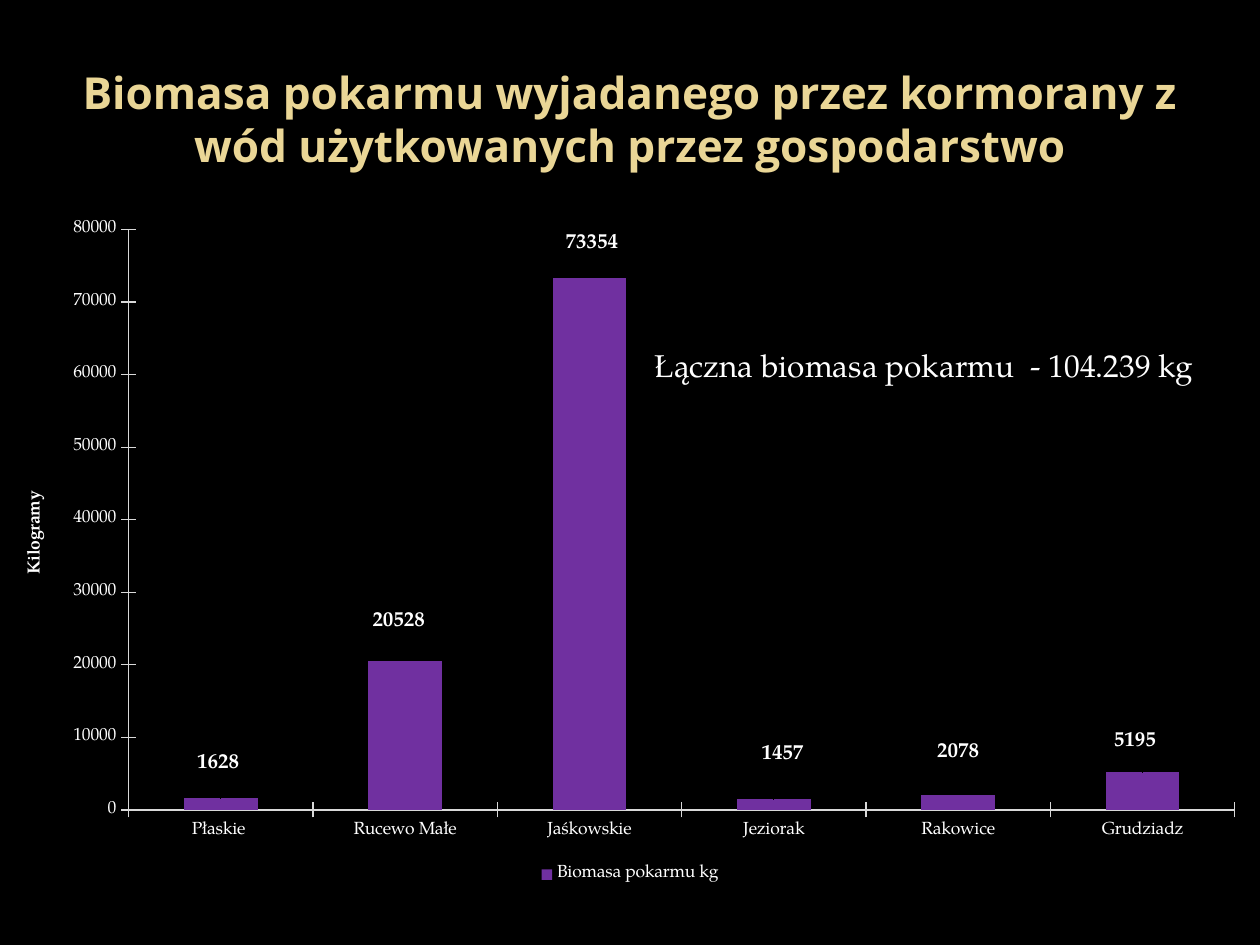
"""Build a slide charting the food biomass eaten by cormorants."""
from dataclasses import dataclass

from lxml import etree
from pptx import Presentation
from pptx import util as u
from pptx.chart.data import CategoryChartData
from pptx.dml.color import RGBColor
from pptx.enum import chart as ch, text
from pptx.oxml.ns import qn


@dataclass(frozen=True)
class Theme:
    back: str = "000000"
    ink: str = "FFFFFF"
    gold: str = "EAD696"
    bar: str = "7030A0"
    axis: str = "D9D9D9"
    head_font: str = "Open Sans"
    body_font: str = "TeX Gyre Pagella"
    title: float = 25.2
    note: float = 18
    label: float = 12
    small: float = 10


T = Theme()
W, H = 10, 7.5
TITLE = "Biomasa pokarmu wyjadanego przez kormorany z wód użytkowanych przez gospodarstwo"
NOTE = "Łączna biomasa pokarmu  - 104.239 kg"
AXIS_TITLE = "Kilogramy"
SERIES = "Biomasa pokarmu kg"
DATA = [
    ("Płaskie ", 1628, (-0.2, -2.8)),
    ("Rucewo Małe", 20528, (-0.5, -3.5)),
    ("Jaśkowskie", 73354, (0.2, -2.8)),
    ("Jeziorak", 1457, (0.7, -4.4)),
    ("Rakowice", 2078, (0, -4)),
    ("Grudziadz", 5195, (-0.6, -2.3)),
]
BOXES = {
    "title": (0.05, 0.04, 0.9, 0.17),
    "chart": (0, 0.22, 1, 0.72),
    "note": (0.51, 0.36, 0.46, 0.05),
}
PLOT = {"x": 10.2, "y": 3.2, "w": 87.8, "h": 85.3}
AXIS_TITLE_AT = {"x": 1.8, "y": 41.2}


def box(name):
    x, y, w, h = BOXES[name]
    return [u.Inches(v) for v in (x * W, y * H, w * W, h * H)]


def style(font, size=T.small, color=T.ink, name=T.body_font, bold=False):
    font.size, font.name, font.bold = u.Pt(size), name, bold
    font.color.rgb = RGBColor.from_string(color)


def write(tf, content, align=None, **fmt):
    p = tf.paragraphs[0]
    p.alignment = align
    r = p.add_run()
    r.text = content
    style(r.font, **fmt)


def place(parent, index, percents, inner=False):
    for old in parent.findall(qn("c:layout")):
        parent.remove(old)
    layout = etree.Element(qn("c:layout"))
    manual = etree.SubElement(layout, qn("c:manualLayout"))
    settings = [("layoutTarget", "inner")] if inner else []
    if parent.tag != qn("c:dLbl"):
        settings += [("xMode", "edge"), ("yMode", "edge")]
    settings += [(k, f"{v / 100:.3f}") for k, v in percents.items()]
    for key, value in settings:
        etree.SubElement(manual, qn(f"c:{key}")).set("val", value)
    parent.insert(index, layout)


def add_biomass_chart(s):
    data = CategoryChartData(number_format="0")
    data.categories = [name for name, _, _ in DATA]
    data.add_series(SERIES, [value for _, value, _ in DATA])
    chart = s.shapes.add_chart(ch.XL_CHART_TYPE.COLUMN_CLUSTERED, *box("chart"), data).chart
    style(chart.font)
    chart.has_title = False
    chart.has_legend = True
    chart.legend.position = ch.XL_LEGEND_POSITION.BOTTOM
    chart.legend.include_in_layout = False
    plot = chart.plots[0]
    plot.gap_width, plot.vary_by_categories = 150, False
    bars = plot.series[0]
    bars.format.fill.solid()
    bars.format.fill.fore_color.rgb = RGBColor.from_string(T.bar)
    for i in range(len(DATA)):
        label = bars.points[i].data_label
        style(label.font, size=T.label, bold=True)
        label.position = ch.XL_LABEL_POSITION.OUTSIDE_END
    root = chart.element
    for node, (_, _, shift) in zip(root.iter(qn("c:dLbl")), DATA):
        place(node, 1, dict(zip("xy", shift)))

    for axis in (chart.category_axis, chart.value_axis):
        axis.has_major_gridlines = False
        axis.major_tick_mark = ch.XL_TICK_MARK.CROSS
        axis.format.line.color.rgb = RGBColor.from_string(T.axis)
        axis.format.line.width = u.Pt(0.75)
        style(axis.tick_labels.font)
    values = chart.value_axis
    values.minimum_scale, values.maximum_scale, values.major_unit = 0, 80000, 10000
    values.tick_labels.number_format = "0"
    values.tick_labels.number_format_is_linked = False
    write(values.axis_title.text_frame, AXIS_TITLE, bold=True)
    place(next(root.iter(qn("c:title"))), 1, AXIS_TITLE_AT)
    place(next(root.iter(qn("c:plotArea"))), 0, PLOT, inner=True)


def main():
    prs = Presentation()
    prs.slide_width, prs.slide_height = u.Inches(W), u.Inches(H)
    s = prs.slides.add_slide(prs.slide_layouts[5])
    s.background.fill.solid()
    s.background.fill.fore_color.rgb = RGBColor.from_string(T.back)

    sp = s.shapes.title
    sp.left, sp.top, sp.width, sp.height = box("title")
    tf = sp.text_frame
    tf.vertical_anchor = text.MSO_ANCHOR.MIDDLE
    write(tf, TITLE, align=text.PP_ALIGN.CENTER, size=T.title,
          color=T.gold, name=T.head_font, bold=True)

    add_biomass_chart(s)

    tf = s.shapes.add_textbox(*box("note")).text_frame
    tf.word_wrap = False
    tf.auto_size = text.MSO_AUTO_SIZE.SHAPE_TO_FIT_TEXT
    write(tf, NOTE, size=T.note)
    prs.save("out.pptx")


if __name__ == "__main__":
    main()
